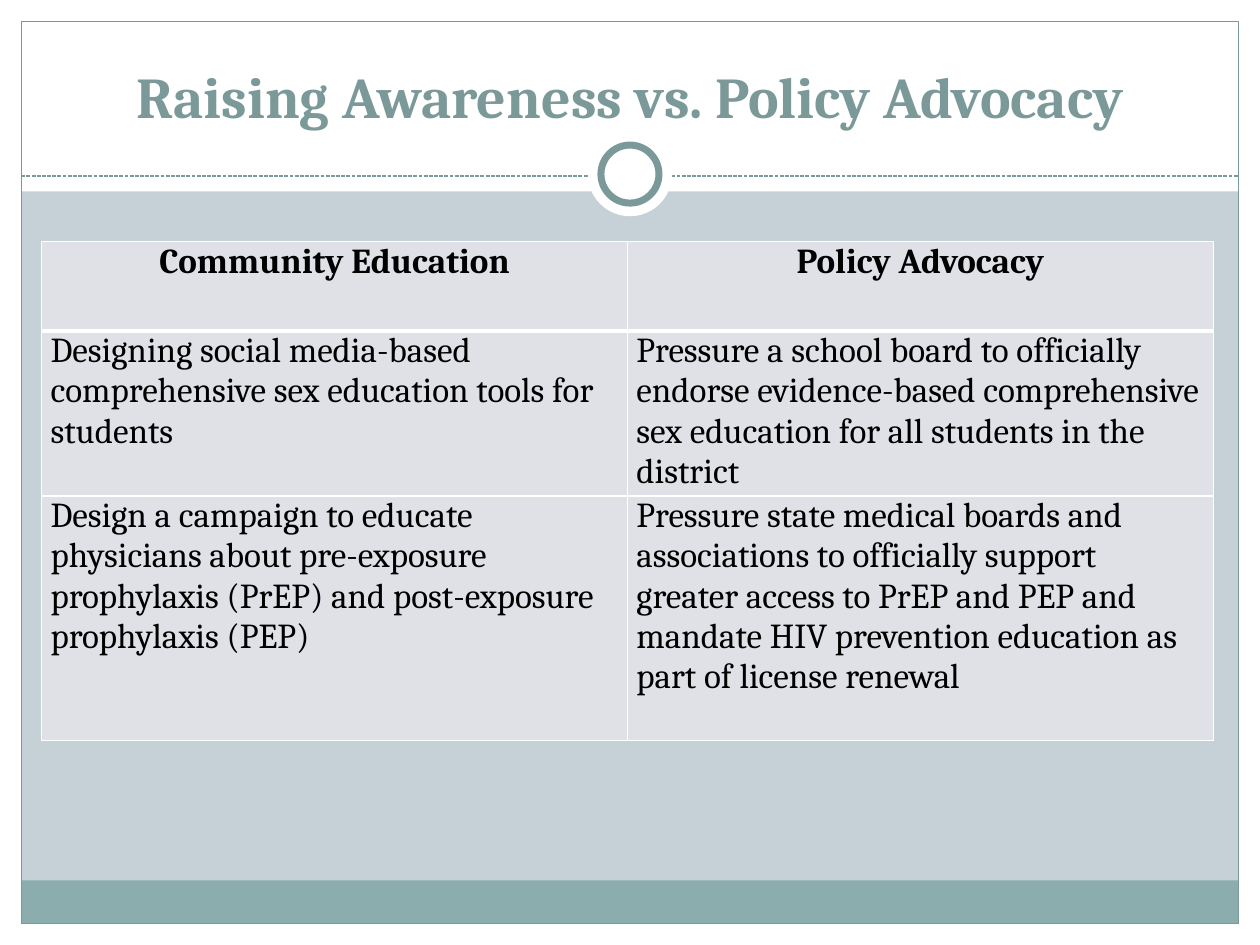
from lxml import etree
from pptx import Presentation
from pptx.dml.color import RGBColor
from pptx.enum.dml import MSO_LINE
from pptx.enum.shapes import MSO_CONNECTOR, MSO_SHAPE
from pptx.enum.text import MSO_ANCHOR, MSO_AUTO_SIZE, PP_ALIGN
from pptx.oxml.ns import qn
from pptx.util import Cm, Pt

RECTANGLE, OVAL = MSO_SHAPE.RECTANGLE, MSO_SHAPE.OVAL
STRAIGHT, DASHED = MSO_CONNECTOR.STRAIGHT, MSO_LINE.SQUARE_DOT
CENTER, LEFT = PP_ALIGN.CENTER, PP_ALIGN.LEFT
BOTTOM, TOP = MSO_ANCHOR.BOTTOM, MSO_ANCHOR.TOP
NO_AUTOFIT = MSO_AUTO_SIZE.NONE

FONT = "Cambria"
COLORS = {
    "background": "C5D1D7",
    "white": "FFFFFF",
    "footer": "8CADAE",
    "accent": "7C999A",
    "cell": "DFE1E7",
    "text": "000000",
}
WIDTH, HEIGHT, MARGIN = 25.4, 19.05, 0.43
RULE_Y = 3.55

COMPARISON = [
    ("Community Education", "Policy Advocacy"),
    (
        "Designing social media-based comprehensive sex education tools for students",
        "Pressure a school board to officially endorse evidence-based comprehensive "
        "sex education for all students in the district",
    ),
    (
        "Design a campaign to educate physicians about pre-exposure prophylaxis "
        "(PrEP) and post-exposure prophylaxis (PEP)",
        "Pressure state medical boards and associations to officially support "
        "greater access to PrEP and PEP and mandate HIV prevention education as "
        "part of license renewal",
    ),
]
ROW_HEIGHTS = (1.8, 3.33, 4.93)


def rgb(name):
    return RGBColor.from_string(COLORS[name])


def add_panel(slide, preset, box, fill=None, line=None, weight=0.75):
    panel = slide.shapes.add_shape(preset, *map(Cm, box))
    panel.shadow.inherit = False
    if fill:
        panel.fill.solid()
        panel.fill.fore_color.rgb = rgb(fill)
    else:
        panel.fill.background()
    if line:
        panel.line.color.rgb = rgb(line)
        panel.line.width = Pt(weight)
    else:
        panel.line.fill.background()


def add_dashed_rule(slide):
    rule = slide.shapes.add_connector(
        STRAIGHT, Cm(MARGIN), Cm(RULE_Y), Cm(WIDTH - MARGIN), Cm(RULE_Y)
    )
    rule.line.color.rgb = rgb("accent")
    rule.line.width = Pt(0.75)
    rule.line.dash_style = DASHED
    etree.SubElement(rule.element.spPr, qn("a:effectLst"))


def add_frame(slide):
    """Draw the white margins, footer band, outline and ring around the content."""
    inner_width = WIDTH - 2 * MARGIN
    for box in (
        (0, HEIGHT - MARGIN, WIDTH, MARGIN),
        (0, 0, WIDTH, 3.86),
        (0, 0, MARGIN, HEIGHT),
        (WIDTH - MARGIN, 0, MARGIN, HEIGHT),
    ):
        add_panel(slide, RECTANGLE, box, fill="white")
    add_panel(slide, RECTANGLE, (MARGIN, 17.75, inner_width, 0.87), fill="footer")
    add_panel(
        slide, RECTANGLE, (MARGIN, MARGIN, inner_width, HEIGHT - 2 * MARGIN), line="accent"
    )
    add_dashed_rule(slide)
    for diameter, line in ((1.7, None), (1.17, "accent")):
        box = ((WIDTH - diameter) / 2, 3.51 - diameter / 2, diameter, diameter)
        add_panel(slide, OVAL, box, fill="white", line=line, weight=4)


def format_paragraph(paragraph, size, color, bold, alignment):
    paragraph.alignment = alignment
    font = paragraph.font
    font.name, font.size, font.bold = FONT, Pt(size), bold
    font.color.rgb = rgb(color)


def place_title(slide, text):
    title = slide.shapes.title
    title.left, title.top, title.width, title.height = map(Cm, (0.85, 0.64, 23.7, 2.1))
    frame = title.text_frame
    frame.text = text
    frame.word_wrap = True
    frame.auto_size = NO_AUTOFIT
    frame.vertical_anchor = BOTTOM
    format_paragraph(frame.paragraphs[0], 33, "accent", True, CENTER)
    # Bring the title in front of the white band
    title.element.getparent().append(title.element)


def set_borders(cell, **weights):
    properties = cell._tc.get_or_add_tcPr()
    for side in "LRTB":
        border = etree.SubElement(
            properties, qn(f"a:ln{side}"), w=str(Pt(weights.get(side, 1)))
        )
        fill = etree.SubElement(border, qn("a:solidFill"))
        etree.SubElement(fill, qn("a:srgbClr"), val=COLORS["white"])


def format_cell(cell, text, row):
    is_header = row == 0
    cell.text = text
    cell.margin_left = cell.margin_right = Cm(0.18)
    cell.margin_top = cell.margin_bottom = 0
    cell.vertical_anchor = TOP
    heavy_sides = {0: {"B": 3}, 1: {"T": 3}}
    set_borders(cell, **heavy_sides.get(row, {}))
    cell.fill.solid()
    cell.fill.fore_color.rgb = rgb("cell")
    format_paragraph(
        cell.text_frame.paragraphs[0], 20, "text", is_header, CENTER if is_header else LEFT
    )


def add_comparison_table(slide):
    column_width = 11.81
    table = slide.shapes.add_table(
        len(COMPARISON), 2, Cm(0.84), Cm(4.87), Cm(2 * column_width), Cm(sum(ROW_HEIGHTS))
    ).table
    for column in table.columns:
        column.width = Cm(column_width)
    for row, (texts, height) in enumerate(zip(COMPARISON, ROW_HEIGHTS)):
        table.rows[row].height = Cm(height)
        for column, text in enumerate(texts):
            format_cell(table.cell(row, column), text, row)


def main():
    presentation = Presentation()
    presentation.slide_width, presentation.slide_height = Cm(WIDTH), Cm(HEIGHT)
    slide = presentation.slides.add_slide(presentation.slide_layouts[5])
    slide.background.fill.solid()
    slide.background.fill.fore_color.rgb = rgb("background")
    add_frame(slide)
    place_title(slide, "Raising Awareness vs. Policy Advocacy")
    add_comparison_table(slide)
    presentation.save("out.pptx")


if __name__ == "__main__":
    main()
